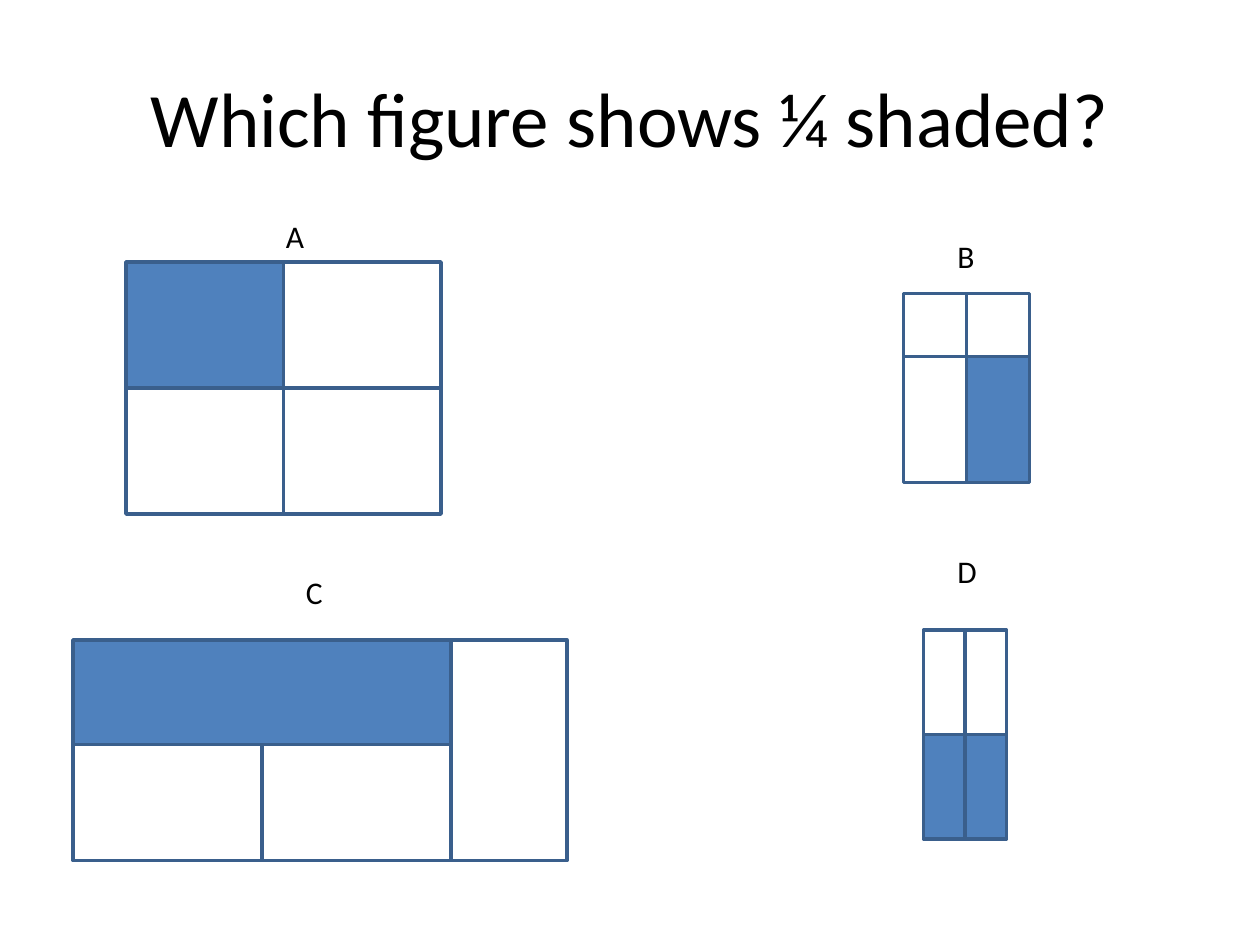
import pptx
import pptx.util
import pptx.dml.color
import pptx.enum.shapes
import pptx.enum.text
from dataclasses import dataclass

Inches = pptx.util.Inches
RGB = pptx.dml.color.RGBColor.from_string
ALIGN = pptx.enum.text.PP_ALIGN
ANCHOR = pptx.enum.text.MSO_ANCHOR


@dataclass(frozen=True)
class Theme:
    font: str = "Calibri"
    text: str = "000000"
    shaded: str = "4F81BD"
    plain: str = "FFFFFF"
    outline: str = "3A5F8C"
    title_size: int = 44
    label_size: int = 18
    line_width: int = 2


THEME = Theme()


def add_text(s, text, box, size, align=ALIGN.LEFT, anchor=ANCHOR.TOP, wrap=True):
    sp = s.shapes.add_textbox(*map(Inches, box))
    tf = sp.text_frame
    tf.word_wrap = wrap
    tf.vertical_anchor = anchor
    p = tf.paragraphs[0]
    p.alignment = align
    r = p.add_run()
    r.text = text
    r.font.name = THEME.font
    r.font.size = pptx.util.Pt(size)
    r.font.color.rgb = RGB(THEME.text)
    return sp


def add_cell(s, box, shaded):
    sp = s.shapes.add_shape(pptx.enum.shapes.MSO_SHAPE.RECTANGLE, *map(Inches, box))
    sp.shadow.inherit = False
    sp.fill.solid()
    sp.fill.fore_color.rgb = RGB(THEME.shaded if shaded else THEME.plain)
    sp.line.color.rgb = RGB(THEME.outline)
    sp.line.width = pptx.util.Pt(THEME.line_width)


def grid(cols, rows):
    """Cells (left, top, width, height) of a grid, row by row."""
    return [(sum(cols[:i]), sum(rows[:j]), w, h)
            for j, h in enumerate(rows) for i, w in enumerate(cols)]


def add_figure(s, label, label_at, origin, cells, shaded):
    """Draw a divided figure from its top-left origin, with its letter."""
    left, top = origin
    for i, (x, y, w, h) in enumerate(cells):
        add_cell(s, (left + x, top + y, w, h), i in shaded)
    sp = add_text(s, label, (*label_at, 0.35, 0.4), THEME.label_size, wrap=False)
    sp.text_frame.auto_size = pptx.enum.text.MSO_AUTO_SIZE.SHAPE_TO_FIT_TEXT


def add_title(s, text, box):
    add_text(s, text, box, THEME.title_size, ALIGN.CENTER, ANCHOR.MIDDLE)


def main():
    prs = pptx.Presentation()
    prs.slide_width, prs.slide_height = Inches(10), Inches(7.5)
    s = prs.slides.add_slide(prs.slide_layouts[6])

    # Question
    add_title(s, "Which figure shows ¼ shaded?", (0.5, 0.3, 9, 1.25))

    # Answer choices: C is a bar over two cells, beside a tall cell
    c_cells = [(0, 0, 3, 0.83), (0, 0.83, 1.5, 0.92),
               (1.5, 0.83, 1.5, 0.92), (3, 0, 0.92, 1.75)]
    figures = [
        ("A", (2.17, 1.67), (1, 2.08), grid([1.25, 1.25], [1, 1]), {0}),
        ("B", (7.5, 1.83), (7.17, 2.33), grid([0.5, 0.5], [0.5, 1]), {3}),
        ("C", (2.33, 4.5), (0.58, 5.08), c_cells, {0}),
        ("D", (7.5, 4.33), (7.33, 5), grid([0.33, 0.33], [0.83, 0.83]), {2, 3}),
    ]
    for figure in figures:
        add_figure(s, *figure)

    prs.save("out.pptx")


if __name__ == "__main__":
    main()
